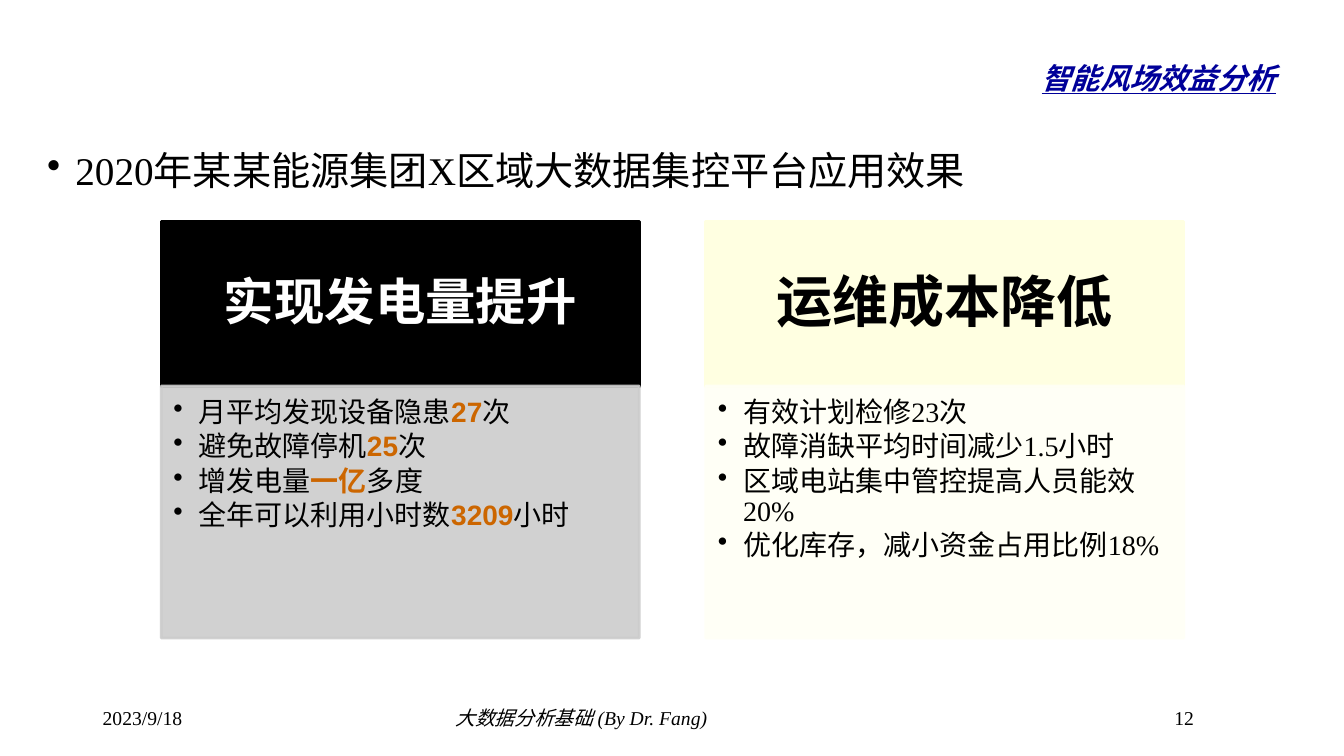
from lxml import etree
from pptx import Presentation
from pptx.dml.color import RGBColor
from pptx.enum.shapes import MSO_SHAPE
from pptx.enum.text import MSO_ANCHOR, PP_ALIGN
from pptx.oxml.ns import qn
from pptx.util import Inches, Pt

RECTANGLE = MSO_SHAPE.RECTANGLE
TOP, MIDDLE = MSO_ANCHOR.TOP, MSO_ANCHOR.MIDDLE
LEFT, CENTER, RIGHT = PP_ALIGN.LEFT, PP_ALIGN.CENTER, PP_ALIGN.RIGHT

BLACK = RGBColor(0x00, 0x00, 0x00)
WHITE = RGBColor(0xFF, 0xFF, 0xFF)
NAVY = RGBColor(0x00, 0x00, 0x99)
ORANGE = RGBColor(0xCC, 0x66, 0x00)
GRAY = RGBColor(0xCC, 0xCC, 0xCC)
YELLOW = RGBColor(0xFF, 0xFF, 0xE1)
IVORY = RGBColor(0xFF, 0xFF, 0xF6)

SERIF, SANS = "Times New Roman", "Arial"
CARD_WIDTH, HEADER_TOP, HEADER_HEIGHT = 4.74, 2.2, 1.64
DETAIL_TOP, DETAIL_HEIGHT = 3.83, 2.5

CARDS = [
    (1.6, BLACK, WHITE, GRAY, "实现发电量提升", 36, SANS, [
        ("月平均发现设备隐患", "27", "次"),
        ("避免故障停机", "25", "次"),
        ("增发电量", "一亿", "多度"),
        ("全年可以利用小时数", "3209", "小时"),
    ]),
    (7, YELLOW, BLACK, IVORY, "运维成本降低", 40, SERIF, [
        ("有效计划检修23次",),
        ("故障消缺平均时间减少1.5小时",),
        ("区域电站集中管控提高人员能效20%",),
        ("优化库存，减小资金占用比例18%",),
    ]),
]


class BenefitSlide:
    """Holds the slide and draws its text lines and benefit cards."""

    def __init__(self, presentation):
        self.slide = presentation.slides.add_slide(presentation.slide_layouts[6])

    def style(self, run, size, color=BLACK, font=SERIF, bold=False, italic=False):
        run.font.size = Pt(size)
        run.font.name = font
        run.font.color.rgb = color
        run.font.bold = bold
        run.font.italic = italic

    def bullet(self, paragraph, indent):
        properties = paragraph._p.get_or_add_pPr()
        properties.set("marL", str(Inches(indent)))
        properties.set("indent", str(-Inches(indent)))
        etree.SubElement(properties, qn("a:buChar"), char="•")

    def text(self, left, top, width, height, text, size, anchor=TOP, align=LEFT, **look):
        box = self.slide.shapes.add_textbox(
            Inches(left), Inches(top), Inches(width), Inches(height))
        frame = box.text_frame
        frame.word_wrap = True
        frame.vertical_anchor = anchor
        frame.text = text
        paragraph = frame.paragraphs[0]
        paragraph.alignment = align
        self.style(paragraph.runs[0], size, **look)
        return paragraph

    def panel(self, left, top, height, color, margins, anchor, opacity=100):
        shape = self.slide.shapes.add_shape(
            RECTANGLE, Inches(left), Inches(top), Inches(CARD_WIDTH), Inches(height))
        shape.shadow.inherit = False
        shape.fill.solid()
        shape.fill.fore_color.rgb = color
        shape.line.color.rgb = color
        shape.line.width = Pt(2)
        if opacity < 100:
            for element in shape._element.spPr.iter(qn("a:srgbClr")):
                etree.SubElement(element, qn("a:alpha"), val=str(opacity * 1000))
        frame = shape.text_frame
        frame.word_wrap = True
        frame.vertical_anchor = anchor
        (frame.margin_left, frame.margin_top,
         frame.margin_right, frame.margin_bottom) = map(Inches, margins)
        return frame

    def card(self, left, header_fill, header_color, detail_fill, title, size, font, items):
        header = self.panel(left, HEADER_TOP, HEADER_HEIGHT, header_fill,
                            (0.3, 0.17, 0.3, 0.17), MIDDLE)
        header.text = title
        paragraph = header.paragraphs[0]
        paragraph.alignment = CENTER
        paragraph.line_spacing = 0.9
        self.style(paragraph.runs[0], size, header_color, bold=True)

        detail = self.panel(left, DETAIL_TOP, DETAIL_HEIGHT, detail_fill,
                            (0.12, 0.12, 0.16, 0.17), TOP, opacity=90)
        for index, parts in enumerate(items):
            paragraph = detail.add_paragraph() if index else detail.paragraphs[0]
            self.bullet(paragraph, 0.25)
            paragraph.alignment = LEFT
            paragraph.line_spacing = 0.9
            paragraph.space_after = Pt(3)
            for position, part in enumerate(parts):
                run = paragraph.add_run()
                run.text = part
                highlighted = position == 1
                self.style(run, 20, ORANGE if highlighted else BLACK, font, highlighted)


def main():
    presentation = Presentation()
    presentation.slide_width = Inches(13.33)
    presentation.slide_height = Inches(7.5)
    page = BenefitSlide(presentation)

    title = page.text(1.94, 0.05, 10.81, 1.1, "智能风场效益分析", 36, MIDDLE, RIGHT,
                      color=NAVY, bold=True, italic=True)
    title.runs[0].font.underline = True
    title.runs[0]._r.get_or_add_rPr().set("baseline", "-25000")

    heading = page.text(0.37, 1.31, 12.6, 0.75,
                        "2020年某某能源集团X区域大数据集控平台应用效果", 28)
    page.bullet(heading, 0.28)
    heading.line_spacing = 1.2

    for card in CARDS:
        page.card(*card)

    page.text(0.92, 6.95, 3, 0.4, "2023/9/18", 14)
    page.text(4.42, 6.95, 6.42, 0.4, "大数据分析基础 (By Dr. Fang)", 14, italic=True)
    page.text(11.55, 6.95, 0.87, 0.4, "12", 14)
    presentation.save("out.pptx")


if __name__ == "__main__":
    main()
